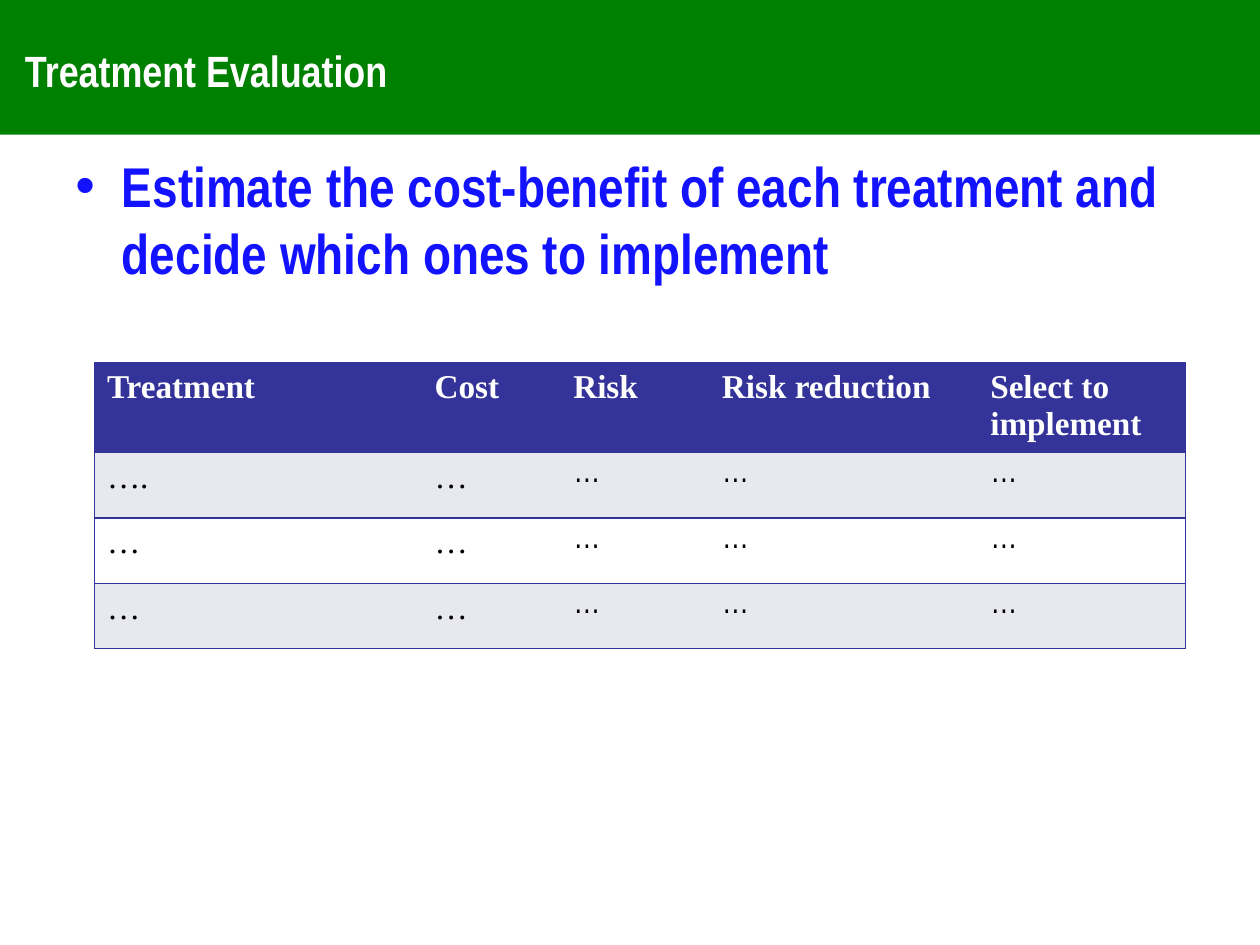
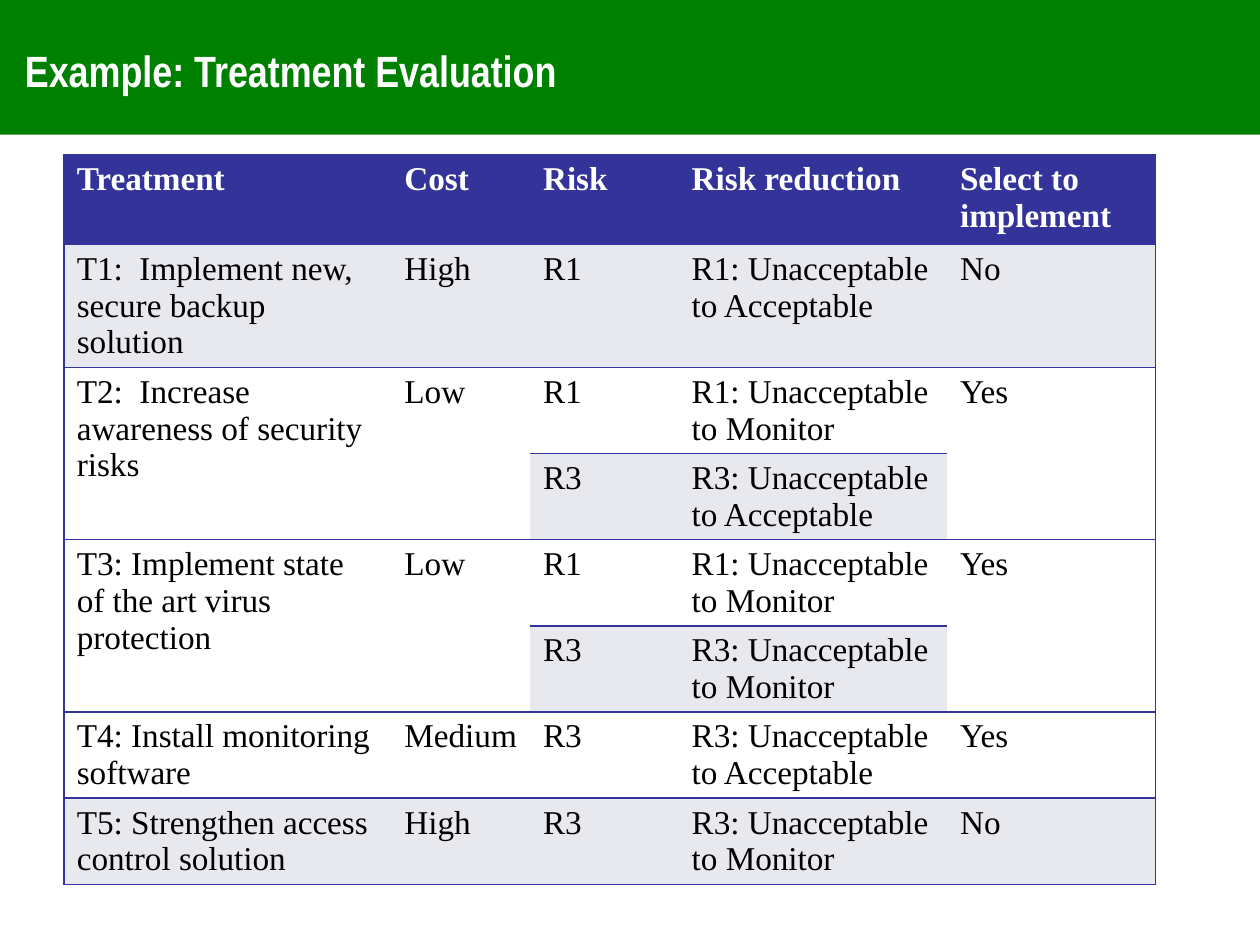
from lxml import etree
from pptx import Presentation
from pptx.dml.color import RGBColor
from pptx.enum.shapes import MSO_SHAPE
from pptx.enum.text import MSO_ANCHOR, PP_ALIGN
from pptx.oxml.ns import qn
from pptx.util import Inches, Pt

RECTANGLE = MSO_SHAPE.RECTANGLE
MIDDLE = MSO_ANCHOR.MIDDLE
LEFT = PP_ALIGN.LEFT

GREEN, BLUE, NAVY = "008000", "1312FF", "333399"
PALE, WHITE, BLACK = "E8E8EF", "FFFFFF", "000000"
NARROW, SERIF = "Arial Narrow", "Times New Roman"

HEADINGS = ["Treatment", "Cost", "Risk", "Risk reduction", "Select to implement"]
COLUMN_WIDTHS = [2.6, 1.1, 1.18, 2.13, 1.65]
HEADING_HEIGHT = 0.71
SERIF_LINE = Pt(21)

OUTLINE = [
    ["….", "…", "…", "…", "…"],
    ["…"] * 5,
    ["…"] * 5,
]
TREATMENTS = [
    ["T1:  Implement new, secure backup solution", "High", "R1",
     "R1: Unacceptable to Acceptable", "No"],
    ["T2:  Increase awareness of security risks", "Low", "R1",
     "R1: Unacceptable to Monitor", "Yes"],
    [None, None, "R3", "R3: Unacceptable to Acceptable", None],
    ["T3: Implement state of the art virus protection", "Low", "R1",
     "R1: Unacceptable to Monitor", "Yes"],
    [None, None, "R3", "R3: Unacceptable to Monitor", None],
    ["T4: Install monitoring software", "Medium", "R3",
     "R3: Unacceptable to Acceptable", "Yes"],
    ["T5: Strengthen access control solution", "High", "R3",
     "R3: Unacceptable to Monitor", "No"],
]


def rgb(value):
    return RGBColor.from_string(value)


def style(paragraph, font, size, color, bold):
    paragraph.alignment = LEFT
    if font == SERIF:
        paragraph.line_spacing = SERIF_LINE
    for run in paragraph.runs:
        run.font.name = font
        run.font.size = Pt(size)
        run.font.color.rgb = rgb(color)
        run.font.bold = bold


def add_text(slide, box, text):
    frame = slide.shapes.add_textbox(*map(Inches, box)).text_frame
    frame.word_wrap = True
    frame.text = text
    return frame


def add_title_band(slide, title):
    band = slide.shapes.add_shape(RECTANGLE, 0, 0, Inches(10), Inches(1.07))
    band.shadow.inherit = False
    band.fill.solid()
    band.fill.fore_color.rgb = rgb(GREEN)
    band.line.fill.background()
    heading = add_text(slide, (0.1, 0.21, 9, 0.69), title)
    heading.vertical_anchor = MIDDLE
    style(heading.paragraphs[0], NARROW, 25, WHITE, True)


def add_bullet(slide, box, text):
    paragraph = add_text(slide, box, text).paragraphs[0]
    properties = paragraph._p.get_or_add_pPr()
    properties.set("marL", str(Inches(0.37)))
    properties.set("indent", str(Inches(-0.37)))
    etree.SubElement(properties, qn("a:buFont")).set("typeface", "Arial")
    etree.SubElement(properties, qn("a:buChar")).set("char", "•")
    style(paragraph, NARROW, 32, BLUE, True)


def set_borders(cell, drawn_sides):
    properties = cell._tc.get_or_add_tcPr()
    for position, side in enumerate("LRTB"):
        line = etree.Element(qn(f"a:ln{side}"), w=str(Pt(1)))
        if side in drawn_sides:
            fill = etree.SubElement(line, qn("a:solidFill"))
            etree.SubElement(fill, qn("a:srgbClr")).set("val", NAVY)
        else:
            etree.SubElement(line, qn("a:noFill"))
        properties.insert(position, line)


def add_treatment_table(slide, left, top, body, body_heights, dots_font=SERIF):
    rows = [HEADINGS] + body
    heights = [HEADING_HEIGHT] + body_heights
    last = len(HEADINGS) - 1
    table = slide.shapes.add_table(
        len(rows), len(HEADINGS), Inches(left), Inches(top),
        Inches(sum(COLUMN_WIDTHS)), Inches(sum(heights))).table
    table.horz_banding = False
    for column, width in zip(table.columns, COLUMN_WIDTHS):
        column.width = Inches(width)
    for r, (texts, height) in enumerate(zip(rows, heights)):
        table.rows[r].height = Inches(height)
        for c, text in enumerate(texts):
            cell = table.cell(r, c)
            cell.fill.solid()
            banding = PALE if r % 2 and text is not None else WHITE
            cell.fill.fore_color.rgb = rgb(banding if r else NAVY)
            sides = "B" if text is None else "TB"
            sides += "L" if c == 0 else "R" if c == last else ""
            set_borders(cell, sides)
            if text is None:
                table.cell(r - 1, c).merge(cell)
                continue
            cell.text_frame.text = text
            font = dots_font if r and c > 1 else SERIF
            style(cell.text_frame.paragraphs[0], font, 19,
                  BLACK if r else WHITE, r == 0)


def build_outline_slide(slide):
    add_title_band(slide, "Treatment Evaluation")
    add_bullet(slide, (0.5, 1.15, 9, 1.3),
               "Estimate the cost-benefit of each treatment and "
               "decide which ones to implement")
    add_treatment_table(slide, 0.75, 2.88, OUTLINE, [0.52] * 3, NARROW)


def build_example_slide(slide):
    add_title_band(slide, "Example: Treatment Evaluation")
    add_treatment_table(slide, 0.51, 1.23, TREATMENTS, [0.97] + [0.68] * 6)


def main():
    deck = Presentation()
    deck.slide_width = Inches(10)
    deck.slide_height = Inches(7.5)
    for build in (build_outline_slide, build_example_slide):
        build(deck.slides.add_slide(deck.slide_layouts[6]))
    deck.save("out.pptx")


if __name__ == "__main__":
    main()
